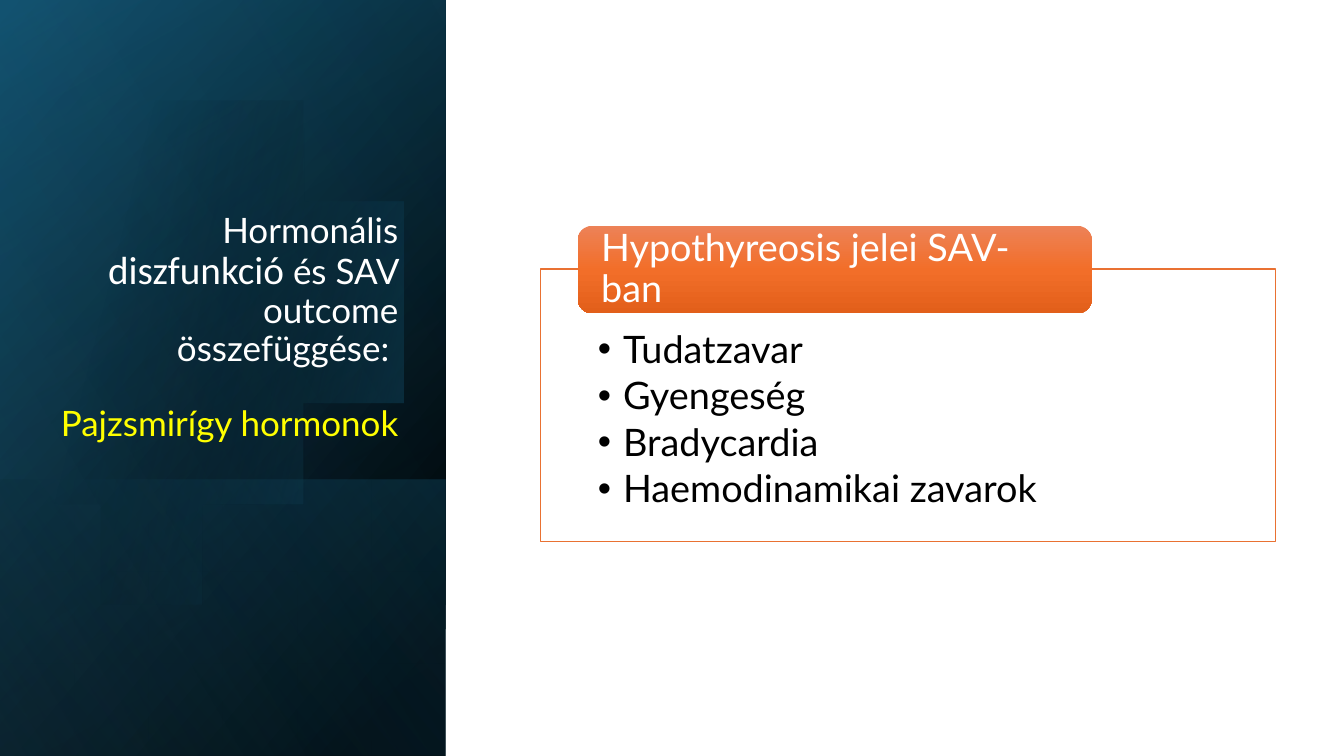
from math import cos, radians, sin

from lxml import etree
from pptx import Presentation
from pptx.dml.color import RGBColor
from pptx.enum.shapes import MSO_SHAPE as Preset
from pptx.enum.text import MSO_ANCHOR as Anchor, MSO_AUTO_SIZE as AutoSize, PP_ALIGN as Align
from pptx.oxml import parse_xml
from pptx.oxml.ns import nsdecls, qn
from pptx.util import Inches, Pt

COLORS = {
    "white": "FFFFFF", "black": "000000", "yellow": "FFFF00",
    "navy": "104862", "teal": "156082", "sky": "46B1E1",
    "orange": "E97132", "tab_top": "ED8257", "tab_middle": "F26E29", "tab_bottom": "E25F1A",
}
SIDEBAR_WIDTH, SLIDE_HEIGHT = 4.42, 7.5
BAND_TOP = 4.76


def color(name):
    return RGBColor.from_string(COLORS[name])


def paint_gradient(shape, angle, stops):
    shape.shadow.inherit = False
    shape.line.fill.background()
    shape.fill.background()
    stop_xml = "".join(
        f'<a:gs pos="{position * 1000}"><a:srgbClr val="{COLORS[name]}">'
        f'<a:alpha val="{opacity * 1000}"/></a:srgbClr></a:gs>'
        for position, name, opacity in stops
    )
    gradient = parse_xml(
        f'<a:gradFill {nsdecls("a")} rotWithShape="1"><a:gsLst>{stop_xml}</a:gsLst>'
        f'<a:lin ang="{angle * 60000}" scaled="0"/></a:gradFill>'
    )
    properties = shape.element.spPr
    properties.replace(properties.find(qn("a:noFill")), gradient)


deck = Presentation()
deck.slide_width, deck.slide_height = Inches(13.33), Inches(SLIDE_HEIGHT)
page = deck.slides.add_slide(deck.slide_layouts[5])
shapes = page.shapes

center_x, center_y, radius = 1.43, 3.38, 2.285
rim = [
    (center_x + radius * cos(radians(angle)), center_y + radius * sin(radians(angle)))
    for angle in range(-128, 129, 2)
]
layers = [
    (0, 220, [(8, "black", 100), (100, "navy", 100)]),
    (0, 240, [(0, "black", 0), (99, "teal", 46)]),
    (BAND_TOP, 140, [(2, "teal", 29), (100, "black", 30)]),
    ("disc", 14, [(29, "black", 0), (100, "teal", 43)]),
    (0, 150, [(0, "black", 0), (99, "sky", 11)]),
]
for top, angle, stops in layers:
    if top == "disc":
        outline = shapes.build_freeform(*rim[0], scale=Inches(1))
        outline.add_line_segments(rim[1:], close=True)
        layer = outline.convert_to_shape()
    else:
        layer = shapes.add_shape(
            Preset.RECTANGLE, 0, Inches(top), Inches(SIDEBAR_WIDTH), Inches(SLIDE_HEIGHT - top)
        )
    paint_gradient(layer, angle, stops)

title = shapes.title
shapes.element.append(title.element)
title.left, title.top, title.width, title.height = map(Inches, (0.41, 1.84, 3.64, 2.62))
frame = title.text_frame
frame.word_wrap = True
frame.auto_size = AutoSize.NONE
frame.vertical_anchor = Anchor.BOTTOM
para = frame.paragraphs[0]
para.alignment = Align.RIGHT
para.line_spacing = 0.9
for text, size, font, tint, breaks in [
    ("Hormonális ", 25, "Lato", "white", 0),
    ("diszfunkció", 28, "Calibri", "white", 0),
    (" és SAV outcome összefüggése: ", 25, "Lato", "white", 2),
    ("Pajzsmirígy hormonok", 25, "Lato", "yellow", 0),
]:
    span = para.add_run()
    span.text = text
    span.font.size, span.font.name = Pt(size), font
    span.font.color.rgb = color(tint)
    for _ in range(breaks):
        para.add_line_break()
for line_break in para._p.findall(qn("a:br")):
    etree.SubElement(line_break, qn("a:rPr"), sz="2500")

box = shapes.add_shape(Preset.RECTANGLE, *map(Inches, (5.36, 2.67, 7.29, 2.7)))
box.shadow.inherit = False
box.fill.solid()
box.fill.fore_color.rgb = color("white")
box.line.color.rgb = color("orange")
box.line.width = Pt(1)

tab = shapes.add_shape(Preset.ROUNDED_RECTANGLE, *map(Inches, (5.73, 2.24, 5.1, 0.87)))
paint_gradient(tab, 90, [(0, "tab_top", 100), (50, "tab_middle", 100), (100, "tab_bottom", 100)])

symptoms = ["Tudatzavar", "Gyengeség", "Bradycardia", "Haemodinamikai zavarok"]
for shape, lines, tint, anchor, insets in [
    (box, symptoms, "black", Anchor.TOP, (0.57, 0.61, 0.57, 0.21)),
    (tab, ["Hypothyreosis jelei SAV-ban"], "white", Anchor.MIDDLE, (0.19, 0, 0.19, 0)),
]:
    frame = shape.text_frame
    frame.word_wrap = True
    frame.vertical_anchor = anchor
    frame.margin_left, frame.margin_top, frame.margin_right, frame.margin_bottom = map(Inches, insets)
    for index, line in enumerate(lines):
        para = frame.add_paragraph() if index else frame.paragraphs[0]
        para.text = line
        para.alignment = Align.LEFT
        para.line_spacing = 0.9
        if shape is box:
            para.space_after = Pt(4)
            layout = para._p.get_or_add_pPr()
            layout.set("marL", str(Inches(0.25)))
            layout.set("indent", str(-Inches(0.25)))
            etree.SubElement(layout, qn("a:buFont"), typeface="Arial")
            etree.SubElement(layout, qn("a:buChar"), char="•")
        para.font.size, para.font.name = Pt(27), "Lato"
        para.font.color.rgb = color(tint)

deck.save("out.pptx")
